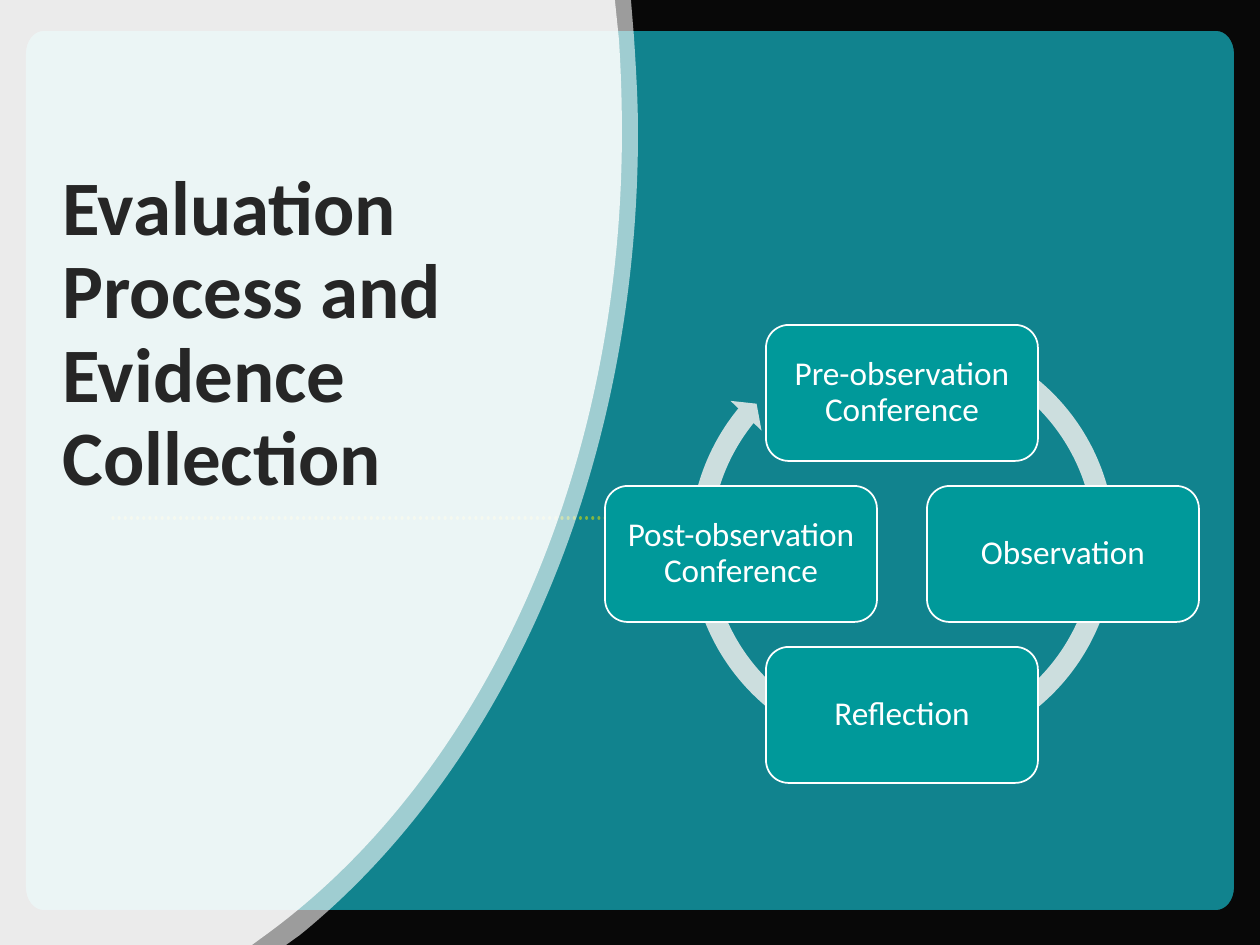
from lxml.etree import SubElement
from pptx import Presentation
from pptx.dml.color import RGBColor
from pptx.enum.dml import MSO_LINE
from pptx.enum.shapes import MSO_CONNECTOR, MSO_SHAPE
from pptx.enum.text import MSO_ANCHOR, PP_ALIGN
from pptx.oxml.ns import qn
from pptx.util import Pt

PX = 7257
WIDTH, HEIGHT = 1260, 945
GREY = RGBColor(0x45, 0x45, 0x45)
BLACK = RGBColor(0x00, 0x00, 0x00)
TEAL = RGBColor(0x00, 0x99, 0xA7)
GREEN = RGBColor(0x83, 0xB6, 0x41)
WHITE = RGBColor(0xFF, 0xFF, 0xFF)
INK = RGBColor(0x26, 0x26, 0x26)
RING = RGBColor(0xCC, 0xDE, 0xDE)
BOX = RGBColor(0x00, 0x99, 0x9A)


def add_outline(shapes, contours, color, opacity):
    builder = None
    for (start,), *steps in contours:
        if builder is None:
            builder = shapes.build_freeform(*start, scale=PX)
        else:
            builder.move_to(*start)
        builder.add_line_segments([point for step in steps for point in step], close=True)
    outline = builder.convert_to_shape()
    segments = iter(list(outline._element.iter(qn("a:lnTo"))))
    for step in (step for contour in contours for step in contour[1:]):
        segment = next(segments)
        if len(step) == 3:
            segment.tag = qn("a:cubicBezTo")
            for extra in (next(segments), next(segments)):
                segment.append(extra[0])
                extra.getparent().remove(extra)
    outline.shadow.inherit = False
    outline.line.fill.background()
    outline.fill.solid()
    outline.fill.fore_color.rgb = color
    rgb = outline._element.spPr.find(".//" + qn("a:srgbClr"))
    SubElement(rgb, qn("a:alpha")).set("val", str(opacity * 1000))


def write_text(holder, text, color, frame_format, paragraph_format, font_format):
    frame = holder.text_frame
    frame.text = text
    paragraph = frame.paragraphs[0]
    font = paragraph.runs[0].font
    font.color.rgb = color
    for target, values in ((frame, frame_format), (paragraph, paragraph_format), (font, font_format)):
        for key, value in values.items():
            setattr(target, key, value)


presentation = Presentation()
presentation.slide_width = WIDTH * PX
presentation.slide_height = HEIGHT * PX
slide = presentation.slides.add_slide(presentation.slide_layouts[6])
slide.background.fill.solid()
slide.background.fill.fore_color.rgb = GREY
shapes = slide.shapes

panel = [
    [(44, 31)],
    [(1216, 31)],
    [(1226, 31), (1234, 41), (1234, 54)],
    [(1234, 887)],
    [(1234, 900), (1226, 910), (1216, 910)],
    [(44, 910)],
    [(34, 910), (26, 900), (26, 887)],
    [(26, 54)],
    [(26, 41), (34, 31), (44, 31)],
]
border = [[(0, 0)], [(WIDTH, 0)], [(WIDTH, HEIGHT)], [(0, HEIGHT)]]
add_outline(shapes, [border, panel], BLACK, 87)
add_outline(shapes, [panel], TEAL, 75)

divider = shapes.add_connector(MSO_CONNECTOR.STRAIGHT, 113 * PX, 518 * PX, 630 * PX, 518 * PX)
divider.line.color.rgb = GREEN
divider.line.width = Pt(1.75)
divider.line.dash_style = MSO_LINE.ROUND_DOT
divider._element.spPr.find(qn("a:ln")).set("cap", "rnd")
SubElement(divider._element.spPr, qn("a:effectLst"))

outer_arc = [
    [(0, 0)],
    [(631, 0)],
    [(634, 37)],
    [(636, 68), (638, 101), (638, 132)],
    [(638, 473), (503, 770), (300, 935)],
    [(286, HEIGHT)],
    [(0, HEIGHT)],
]
inner_arc = [
    [(0, 0)],
    [(615, 0)],
    [(619, 39)],
    [(621, 69), (622, 101), (622, 132)],
    [(622, 480), (478, 782), (263, 937)],
    [(252, HEIGHT)],
    [(0, HEIGHT)],
]
add_outline(shapes, [outer_arc], WHITE, 60)
add_outline(shapes, [inner_arc], WHITE, 80)

title = shapes.add_textbox(50 * PX, 121 * PX, 554 * PX, 387 * PX)
write_text(
    title,
    "Evaluation Process and Evidence Collection",
    INK,
    {"word_wrap": True, "vertical_anchor": MSO_ANCHOR.BOTTOM},
    {"line_spacing": 0.9},
    {"name": "Calibri", "size": Pt(44), "bold": True},
)

ring = shapes.add_shape(MSO_SHAPE.CIRCULAR_ARROW, 679 * PX, 320 * PX, 447 * PX, 447 * PX)
for index, value in enumerate((0.047, 2.729, 131.541, 178.149, 0.048)):
    ring.adjustments[index] = value
ring.shadow.inherit = False
ring.fill.solid()
ring.fill.fore_color.rgb = RING
ring.line.fill.background()

center_x, center_y, reach = 902, 554, 161
box_width, box_height, inset = 272, 136, 16
stages = [
    ("Pre-observation Conference", 0, -1),
    ("Observation", 1, 0),
    ("Reflection", 0, 1),
    ("Post-observation Conference", -1, 0),
]
stage_frame = {"word_wrap": True, "vertical_anchor": MSO_ANCHOR.MIDDLE}
stage_frame.update({f"margin_{side}": inset * PX for side in ("left", "top", "right", "bottom")})
for label, across, down in stages:
    stage = shapes.add_shape(
        MSO_SHAPE.ROUNDED_RECTANGLE,
        (center_x + across * reach - box_width // 2) * PX,
        (center_y + down * reach - box_height // 2) * PX,
        box_width * PX,
        box_height * PX,
    )
    stage.shadow.inherit = False
    stage.fill.solid()
    stage.fill.fore_color.rgb = BOX
    stage.line.color.rgb = WHITE
    stage.line.width = Pt(1)
    write_text(
        stage,
        label,
        WHITE,
        stage_frame,
        {"alignment": PP_ALIGN.CENTER, "line_spacing": 0.9},
        {"name": "Calibri", "size": Pt(19)},
    )

presentation.save("out.pptx")
